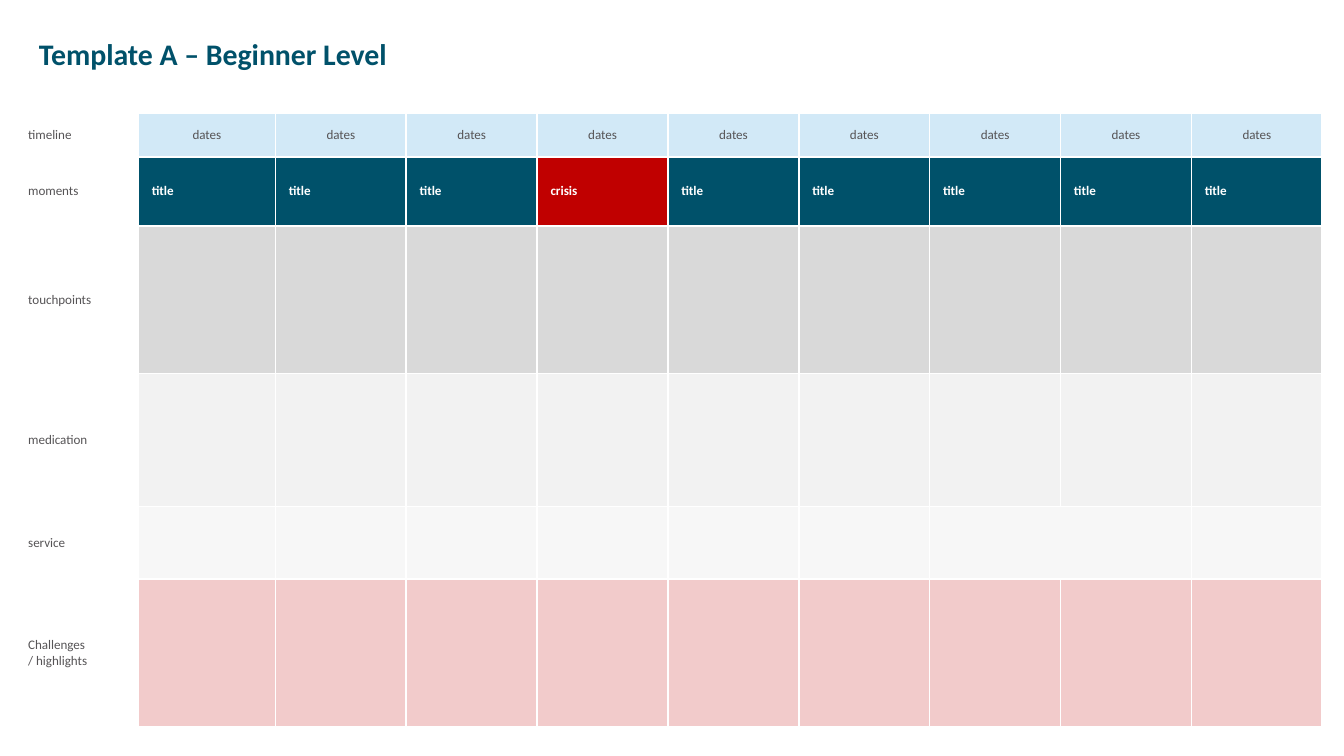
"""Build a beginner-level journey map slide."""
from dataclasses import dataclass

from pptx import Presentation
from pptx.dml.color import RGBColor
from pptx.enum.text import MSO_ANCHOR, PP_ALIGN
from pptx.table import Table, _Cell
from pptx.text.text import TextFrame
from pptx.util import Inches, Pt

WHITE, GRAY, TEAL, RED = "FFFFFF", "565456", "00516A", "C00000"
MOMENT_COUNT = 9
CRISIS_COLUMN = 4
TABLE_WIDTH = 9.73
LABEL_WIDTH, FIRST_MOMENT_WIDTH = 0.92, 1.02


@dataclass(frozen=True)
class JourneyRow:
    label: str
    height: float
    fill: str
    text: str = ""
    color: str = GRAY
    bold: bool = False
    align: PP_ALIGN = PP_ALIGN.LEFT


JOURNEY_ROWS = [
    JourneyRow("timeline", 0.33, "D2E9F7", "dates", align=PP_ALIGN.CENTER),
    JourneyRow("moments", 0.51, TEAL, "title", WHITE, True),
    JourneyRow("touchpoints", 1.1, "D9D9D9"),
    JourneyRow("medication", 0.99, "F2F2F2"),
    JourneyRow("service", 0.54, "F7F7F7"),
    JourneyRow("Challenges\n/ highlights", 1.1, "F2CBCB"),
]


def rgb(color: str) -> RGBColor:
    return RGBColor.from_string(color)


def write_text(frame: TextFrame, text: str, *, size: float = 7, color: str = GRAY,
               bold: bool = False, align: PP_ALIGN = PP_ALIGN.LEFT) -> None:
    frame.text = text
    for paragraph in frame.paragraphs:
        paragraph.alignment = align
        for run in paragraph.runs:
            run.font.name = "Calibri"
            run.font.size = Pt(size)
            run.font.bold = bold
            run.font.color.rgb = rgb(color)


def format_cell(cell: _Cell, fill: str) -> None:
    cell.fill.solid()
    cell.fill.fore_color.rgb = rgb(fill)
    cell.vertical_anchor = MSO_ANCHOR.MIDDLE


def fill_row(table: Table, index: int, row: JourneyRow) -> None:
    table.rows[index].height = Inches(row.height)
    label_cell = table.cell(index, 0)
    format_cell(label_cell, WHITE)
    write_text(label_cell.text_frame, row.label)
    for column in range(1, MOMENT_COUNT + 1):
        is_crisis = row.label == "moments" and column == CRISIS_COLUMN
        cell = table.cell(index, column)
        format_cell(cell, RED if is_crisis else row.fill)
        if row.text:
            write_text(cell.text_frame, "crisis" if is_crisis else row.text,
                       color=row.color, bold=row.bold, align=row.align)
    if row.label == "service":
        table.cell(index, 7).merge(table.cell(index, 8))


def main() -> None:
    presentation = Presentation()
    presentation.slide_width = Inches(10)
    presentation.slide_height = presentation.slide_width * 9 // 16
    slide = presentation.slides.add_slide(presentation.slide_layouts[5])

    title = slide.shapes.title
    title.left, title.top = Inches(0.29), Inches(0.19)
    title.width, title.height = Inches(8.58), Inches(0.41)
    frame = title.text_frame
    frame.margin_left = frame.margin_right = frame.margin_top = frame.margin_bottom = 0
    frame.vertical_anchor = MSO_ANCHOR.MIDDLE
    write_text(frame, "Template A – Beginner Level", size=16, color=TEAL, bold=True)

    other_count = MOMENT_COUNT - 1
    other_width = (TABLE_WIDTH - LABEL_WIDTH - FIRST_MOMENT_WIDTH) / other_count
    column_widths = [LABEL_WIDTH, FIRST_MOMENT_WIDTH] + [other_width] * other_count
    table_height = sum(row.height for row in JOURNEY_ROWS)
    table = slide.shapes.add_table(
        len(JOURNEY_ROWS), len(column_widths), Inches(0.11), Inches(0.84),
        Inches(TABLE_WIDTH), Inches(table_height)).table
    for column, width in zip(table.columns, column_widths):
        column.width = Inches(width)
    for index, row in enumerate(JOURNEY_ROWS):
        fill_row(table, index, row)

    presentation.save("out.pptx")


if __name__ == "__main__":
    main()
